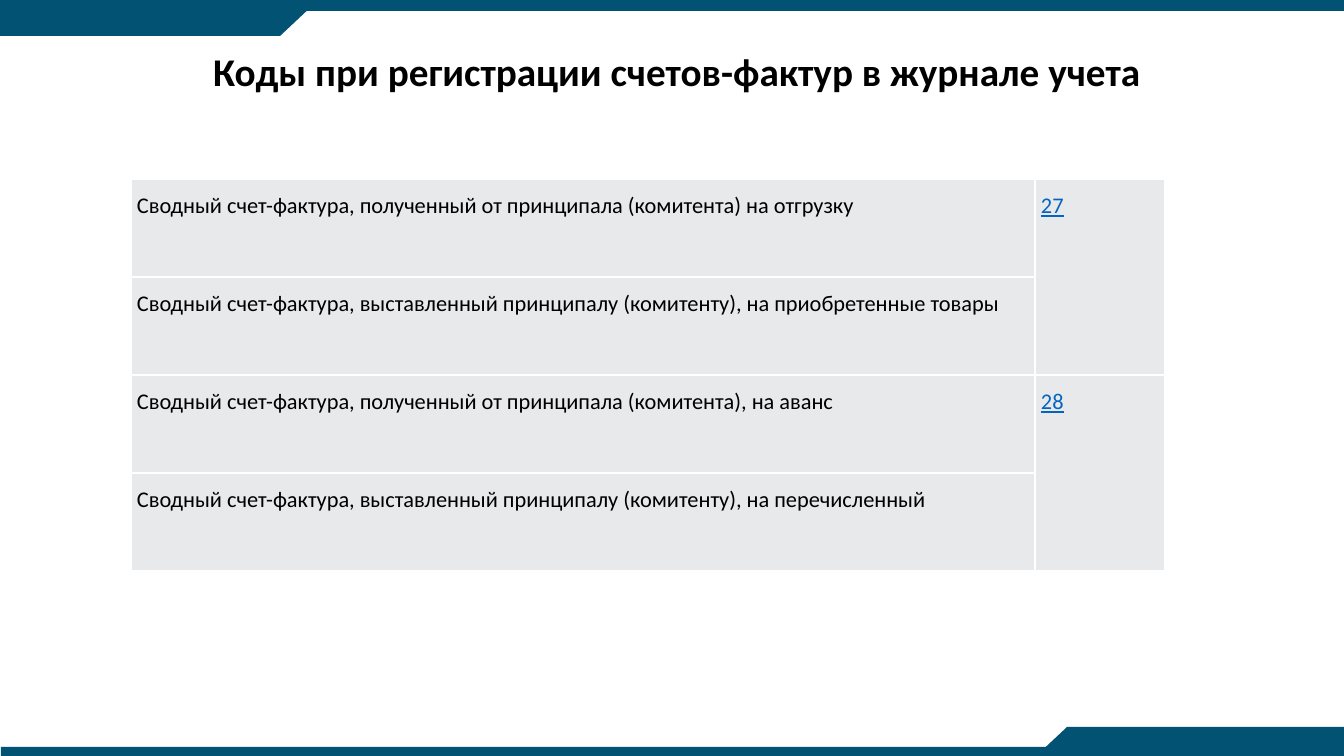
import pptx
import pptx.util
import pptx.dml.color
import pptx.enum.shapes
import pptx.enum.text
import pptx.oxml

SCALE = 12192000 / 1344
COLORS = {"band": "025373", "cell": "E7E9EB", "border": "FFFFFF", "text": "000000", "code": "0563C1"}
RECTANGLE = pptx.enum.shapes.MSO_SHAPE.RECTANGLE
MERGE = pptx.enum.shapes.MSO_SHAPE.FLOWCHART_MERGE


def px(length):
    return pptx.util.Emu(round(length * SCALE))


def format_font(font, color, **values):
    for name, value in values.items():
        setattr(font, name, value)
    font.name = "Calibri"
    font.color.rgb = pptx.dml.color.RGBColor.from_string(COLORS[color])


presentation = pptx.Presentation()
presentation.slide_width = px(1344)
presentation.slide_height = px(756)
slide = presentation.slides.add_slide(presentation.slide_layouts[5])

bands = [
    (RECTANGLE, 0, 0, 1344, 11, 0),
    (RECTANGLE, 1, 747, 1344, 11, 0),
    (RECTANGLE, 0, 5, 280, 31, 0),
    (MERGE, 247, 5, 66, 31, 0),
    (RECTANGLE, 1067, 727, 280, 31, 0),
    (MERGE, 1034, 727, 66, 31, 180),
]
for kind, left, top, width, height, rotation in bands:
    shape = slide.shapes.add_shape(kind, px(left), px(top), px(width), px(height))
    shape.rotation = rotation
    shape.shadow.inherit = False
    shape.fill.solid()
    shape.fill.fore_color.rgb = pptx.dml.color.RGBColor.from_string(COLORS["band"])
    shape.line.fill.background()

title = slide.shapes.title
title_place = {"left": 52, "top": 40, "width": 1249, "height": 62}
for name, value in title_place.items():
    setattr(title, name, px(value))
title_frame = title.text_frame
title_frame.text = "Коды при регистрации счетов-фактур в журнале учета"
frame_format = {
    "margin_left": px(13), "margin_right": px(13), "margin_top": px(7), "margin_bottom": px(7),
    "vertical_anchor": pptx.enum.text.MSO_ANCHOR.TOP,
    "auto_size": pptx.enum.text.MSO_AUTO_SIZE.NONE,
    "word_wrap": True,
}
for name, value in frame_format.items():
    setattr(title_frame, name, value)
title_paragraph = title_frame.paragraphs[0]
title_paragraph.alignment = pptx.enum.text.PP_ALIGN.CENTER
format_font(title_paragraph.font, "text", size=pptx.util.Pt(28), bold=True)

rows = [
    ("Сводный счет-фактура, полученный от принципала (комитента) на отгрузку", "27"),
    ("Сводный счет-фактура, выставленный принципалу (комитенту), на приобретенные товары", ""),
    ("Сводный счет-фактура, полученный от принципала (комитента), на аванс", "28"),
    ("Сводный счет-фактура, выставленный принципалу (комитенту), на перечисленный", ""),
]
table = slide.shapes.add_table(len(rows), 2, px(131), px(179), px(1034), px(392)).table
table.first_row = False
table.horz_banding = False
table.columns[0].width = px(904)
table.columns[1].width = px(130)
for first in (0, 2):
    table.cell(first, 1).merge(table.cell(first + 1, 1))

cell_margins = {"margin_left": 6, "margin_right": 6, "margin_top": 9, "margin_bottom": 9}
for row_index, row in enumerate(rows):
    table.rows[row_index].height = px(98)
    for column_index, text in enumerate(row):
        cell = table.cell(row_index, column_index)
        for name, value in cell_margins.items():
            setattr(cell, name, px(value))
        properties = cell._tc.get_or_add_tcPr()
        for side in ("lnL", "lnR", "lnT", "lnB"):
            properties.append(pptx.oxml.parse_xml(
                f'<a:{side} xmlns:a="http://schemas.openxmlformats.org/drawingml/2006/main" w="12700">'
                f'<a:solidFill><a:srgbClr val="{COLORS["border"]}"/></a:solidFill></a:{side}>'
            ))
        cell.fill.solid()
        cell.fill.fore_color.rgb = pptx.dml.color.RGBColor.from_string(COLORS["cell"])
        if text:
            is_code = column_index == 1
            paragraph = cell.text_frame.paragraphs[0]
            paragraph.line_spacing = 1.15
            run = paragraph.add_run()
            run.text = text
            format_font(run.font, "code" if is_code else "text",
                        size=pptx.util.Pt(16), bold=False, underline=is_code)

presentation.save("out.pptx")
